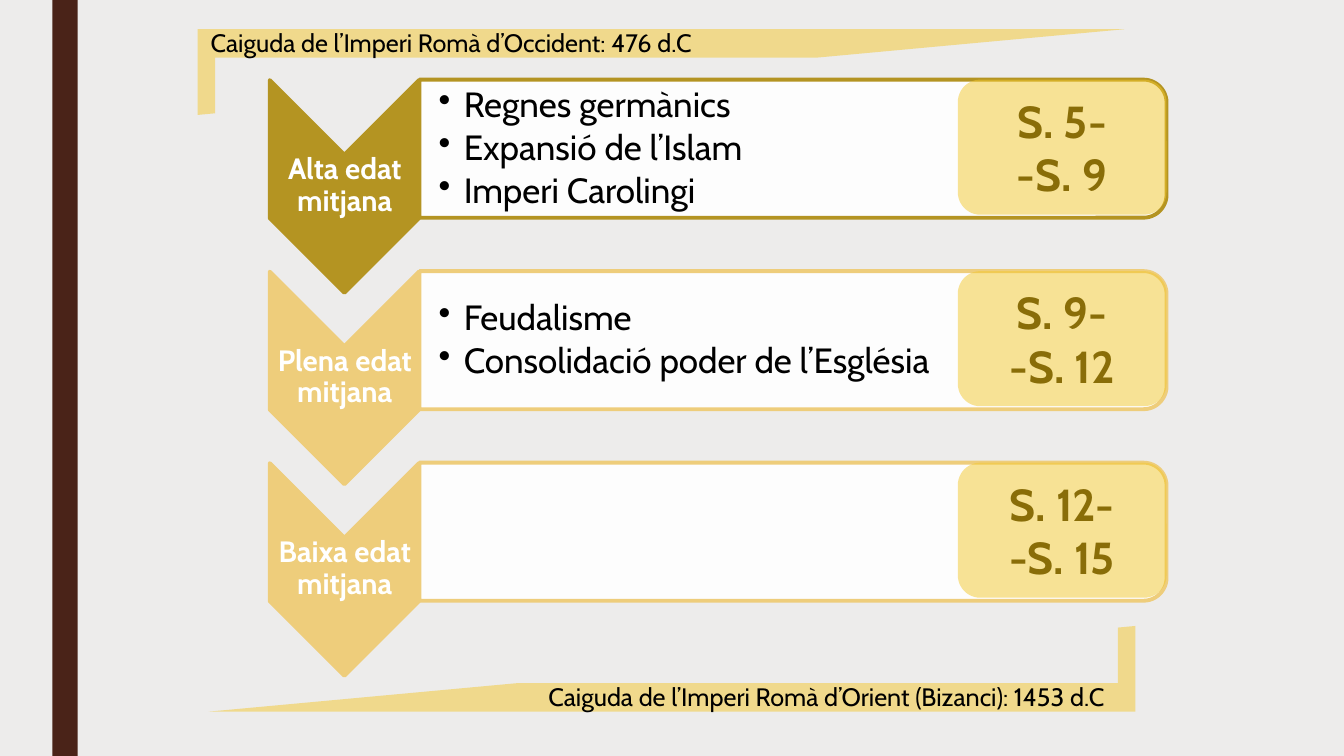
from lxml import etree
from pptx import Presentation
from pptx.dml.color import RGBColor
from pptx.enum.shapes import MSO_SHAPE
from pptx.enum.text import MSO_ANCHOR, MSO_AUTO_SIZE, PP_ALIGN
from pptx.oxml.ns import qn
from pptx.util import Inches, Pt

RECT = MSO_SHAPE.RECTANGLE
CHEVRON = MSO_SHAPE.CHEVRON
PANEL = MSO_SHAPE.ROUND_2_SAME_RECTANGLE
BADGE = MSO_SHAPE.ROUNDED_RECTANGLE
FRAME = MSO_SHAPE.HALF_FRAME
MIDDLE = MSO_ANCHOR.MIDDLE
CENTER = PP_ALIGN.CENTER
LEFT = PP_ALIGN.LEFT
FIT = MSO_AUTO_SIZE.SHAPE_TO_FIT_TEXT

BACK, RAIL = "EDECEB", "4A2318"
OLIVE, SAND, GOLD, BROWN = "B49422", "EECD7B", "F3C82E", "896D08"
WHITE, BLACK = "FFFFFF", "000000"


def color(code):
    return RGBColor.from_string(code)


class Board:
    font = "Cabin"

    def __init__(self, deck):
        self.slide = deck.slides.add_slide(deck.slide_layouts[6])
        self.slide.background.fill.solid()
        self.slide.background.fill.fore_color.rgb = color(BACK)

    def shape(self, kind, box, fill, alpha=100, line=None, turn=0):
        item = self.slide.shapes.add_shape(kind, *map(Inches, box))
        item.shadow.inherit = False
        item.rotation = turn
        item.fill.solid()
        item.fill.fore_color.rgb = color(fill)
        if alpha < 100:
            tint = item._element.spPr.find(qn("a:solidFill")).find(qn("a:srgbClr"))
            etree.SubElement(tint, qn("a:alpha"), val=str(alpha * 1000))
        if line:
            item.line.color.rgb = color(line)
            item.line.width = Pt(2.75)
        else:
            item.line.fill.background()
        return item

    def label(self, frame, lines, size, ink, bold=False, align=LEFT, space=1):
        frame.text = "\n".join(lines)
        for par in frame.paragraphs:
            par.alignment = align
            par.line_spacing = space
            for run in par.runs:
                run.font.name = self.font
                run.font.size = Pt(size)
                run.font.bold = bold
                run.font.color.rgb = color(ink)

    def text(self, box, lines, size, ink, pad=None, wrap=True, **style):
        frame = self.slide.shapes.add_textbox(*map(Inches, box)).text_frame
        frame.word_wrap = wrap
        if pad:
            frame.vertical_anchor = MIDDLE
            frame.margin_left = Inches(pad[0])
            frame.margin_right = frame.margin_top = frame.margin_bottom = Inches(pad[1])
        else:
            frame.auto_size = FIT
        self.label(frame, lines, size, ink, **style)
        return frame

    def bullets(self, box, lines):
        frame = self.text(box, lines, 25, BLACK, pad=(0.19, 0.02), space=0.9)
        for par in frame.paragraphs:
            par.space_after = Pt(3.75)
            props = par._p.get_or_add_pPr()
            props.set("marL", str(Inches(0.25)))
            props.set("indent", str(-Inches(0.25)))
            etree.SubElement(props, qn("a:buChar"), char="•")

    def badge(self, box, lines):
        frame = self.shape(BADGE, box, GOLD, alpha=50).text_frame
        frame.vertical_anchor = MIDDLE
        self.label(frame, lines, 32, BROWN, bold=True, align=CENTER)

    def bracket(self, box, turn=0):
        frame = self.shape(FRAME, box, GOLD, alpha=50, turn=turn)
        frame.adjustments[0] = 0.333
        frame.adjustments[1] = 0.204


def main():
    deck = Presentation()
    deck.slide_width, deck.slide_height = Inches(13.33), Inches(7.5)
    board = Board(deck)

    # Side rail
    board.shape(RECT, (0.52, 0, 0.25, 7.5), RAIL)

    # Periods: chevron, panel and centuries
    rows = [
        ("Alta edat mitjana", OLIVE, ("S. 5-", "-S. 9"),
         ("Regnes germànics", "Expansió de l’Islam", "Imperi Carolingi")),
        ("Plena edat mitjana", SAND, ("S. 9-", "-S. 12"),
         ("Feudalisme", "Consolidació poder de l’Església")),
        ("Baixa edat mitjana", SAND, ("S. 12-", "-S. 15"), ()),
    ]
    for i, (name, tone, years, facts) in enumerate(rows):
        y = 1.9 * i
        board.shape(CHEVRON, (2.36, 1.11 + y, 2.11, 1.48), tone, line=tone, turn=90)
        board.text((2.68, 1.53 + y, 1.48, 0.63), [name], 21, WHITE,
                   pad=(0.01, 0.01), bold=True, align=CENTER, space=0.9)
        board.shape(PANEL, (7.18, y - 2.23, 1.37, 7.41), WHITE, 90, tone, turn=90)
        if facts:
            board.bullets((4.16, 0.86 + y, 7.34, 1.24), facts)
        board.badge((9.5, 0.79 + y, 2.07, 1.34), years)

    # Start and end events
    board.bracket((1.96, 0.29, 9.19, 0.85))
    board.text((1.99, 0.22, 5.08, 0.4),
               ["Caiguda de l’Imperi Romà d’Occident: 476 d.C"], 18, BLACK, wrap=False)
    board.bracket((2.07, 6.21, 9.19, 0.85), turn=180)
    board.text((5.34, 6.71, 5.94, 0.4),
               ["Caiguda de l’Imperi Romà d’Orient (Bizanci): 1453 d.C"], 18, BLACK, wrap=False)

    deck.save("out.pptx")


if __name__ == "__main__":
    main()
